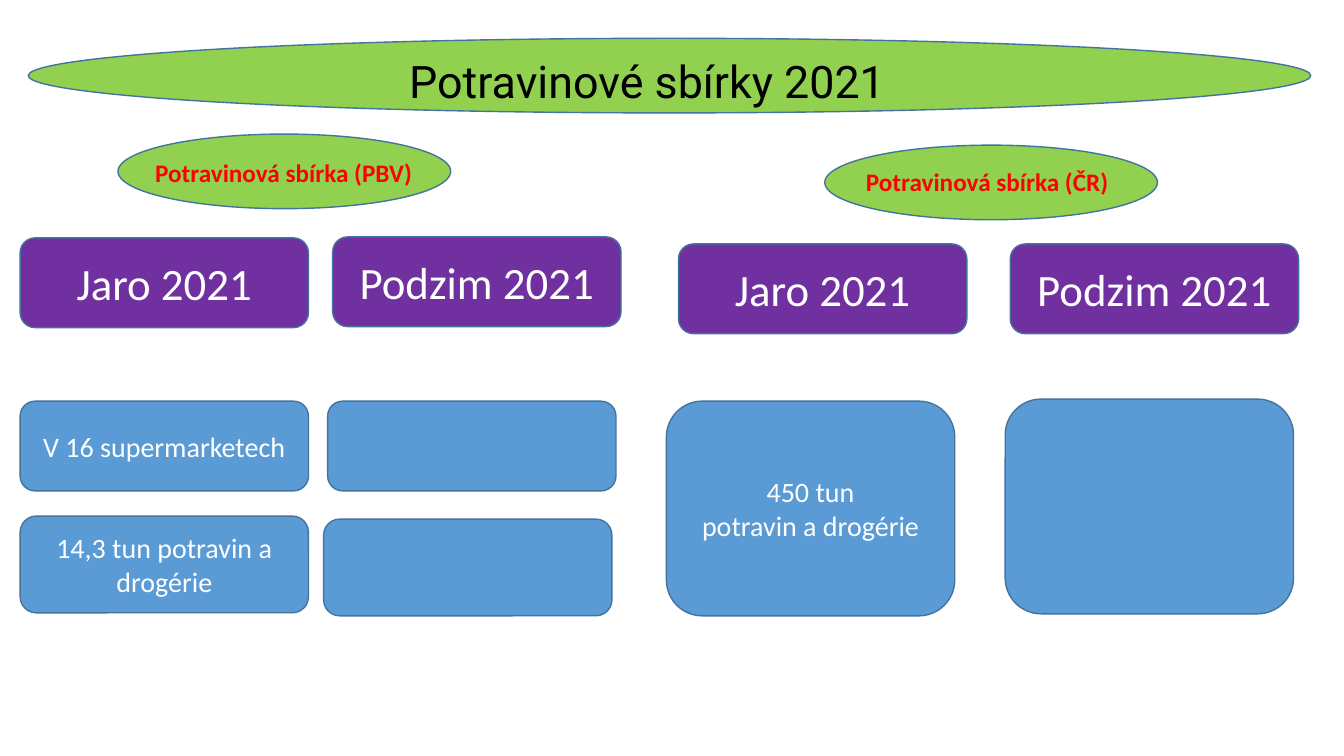
from dataclasses import dataclass

from pptx import Presentation
from pptx.dml.color import RGBColor
from pptx.enum.shapes import MSO_SHAPE as Shape
from pptx.enum.text import MSO_ANCHOR as Anchor, MSO_AUTO_SIZE as AutoSize, PP_ALIGN as Align
from pptx.slide import Slide
from pptx.text.text import TextFrame
from pptx.util import Inches, Pt

GREEN, PURPLE, BLUE, OUTLINE = "92D050", "7030A0", "5B9BD5", "43739E"
BLACK, WHITE, RED = "000000", "FFFFFF", "FF0000"
BOX_WIDTH = 2.86
HEADER_HEIGHT, AMOUNT_HEIGHT, TALL_HEIGHT = 0.89, 0.96, 2.13
ELLIPSE_HEIGHT = 0.74


@dataclass
class Ellipse:
    left: float
    top: float
    width: float


@dataclass
class Label:
    text: str
    left: float
    top: float
    width: float
    height: float
    size: int
    color: str
    font: str = "Calibri"
    bold: bool = False


@dataclass
class Box:
    left: float
    top: float
    height: float
    fill: str = BLUE
    text: str = ""
    size: int = 20


ELLIPSES = [
    Ellipse(0.28, 0.38, 12.72),
    Ellipse(1.17, 1.33, 3.3),
    Ellipse(8.18, 1.44, 3.3),
]
LABELS = [
    Label("Potravinové sbírky 2021", 3.96, 0.48, 6.25, 0.64, 32, BLACK, font="Roboto"),
    Label("Potravinová sbírka (PBV)", 1.44, 1.51, 3.72, 0.4, 18, RED, bold=True),
    Label("Potravinová sbírka (ČR)", 8.49, 1.6, 3.67, 0.4, 18, RED, bold=True),
]
BOXES = [
    Box(0.2, 2.36, HEADER_HEIGHT, PURPLE, "Jaro 2021", 32),
    Box(3.3, 2.35, HEADER_HEIGHT, PURPLE, "Podzim 2021", 32),
    Box(6.73, 2.42, HEADER_HEIGHT, PURPLE, "Jaro 2021", 32),
    Box(10.02, 2.42, HEADER_HEIGHT, PURPLE, "Podzim 2021", 32),
    Box(0.2, 3.98, HEADER_HEIGHT, text="V 16 supermarketech"),
    Box(3.25, 3.98, HEADER_HEIGHT),
    Box(0.2, 5.12, AMOUNT_HEIGHT, text="14,3 tun potravin a drogérie"),
    Box(3.21, 5.15, AMOUNT_HEIGHT),
    Box(6.61, 3.98, TALL_HEIGHT, text="450 tun\npotravin a drogérie"),
    Box(9.97, 3.96, TALL_HEIGHT),
]


def rgb(color: str) -> RGBColor:
    return RGBColor.from_string(color)


def write_text(frame: TextFrame, text: str, color: str, align: Align, font_format: dict) -> None:
    frame.word_wrap = True
    frame.text = text
    for paragraph in frame.paragraphs:
        paragraph.alignment = align
        for run in paragraph.runs:
            run.font.color.rgb = rgb(color)
            for name, value in font_format.items():
                setattr(run.font, name, value)


def add_outlined(slide: Slide, kind: Shape, left: float, top: float,
                 width: float, height: float, fill: str):
    shape = slide.shapes.add_shape(kind, Inches(left), Inches(top), Inches(width), Inches(height))
    shape.shadow.inherit = False
    shape.fill.solid()
    shape.fill.fore_color.rgb = rgb(fill)
    shape.line.color.rgb = rgb(OUTLINE)
    shape.line.width = Pt(1)
    return shape


def add_ellipse(slide: Slide, ellipse: Ellipse) -> None:
    shape = add_outlined(slide, Shape.OVAL, ellipse.left, ellipse.top,
                         ellipse.width, ELLIPSE_HEIGHT, GREEN)
    shape.rotation = 180


def add_label(slide: Slide, label: Label) -> None:
    shape = slide.shapes.add_textbox(Inches(label.left), Inches(label.top),
                                     Inches(label.width), Inches(label.height))
    write_text(shape.text_frame, label.text, label.color, Align.LEFT,
               {"name": label.font, "size": Pt(label.size), "bold": label.bold})
    shape.text_frame.auto_size = AutoSize.SHAPE_TO_FIT_TEXT


def add_box(slide: Slide, box: Box) -> None:
    shape = add_outlined(slide, Shape.ROUNDED_RECTANGLE, box.left, box.top,
                         BOX_WIDTH, box.height, box.fill)
    if box.text:
        shape.text_frame.vertical_anchor = Anchor.MIDDLE
        write_text(shape.text_frame, box.text, WHITE, Align.CENTER,
                   {"name": "Calibri", "size": Pt(box.size)})


def main() -> None:
    presentation = Presentation()
    presentation.slide_width = Inches(13.33)
    presentation.slide_height = Inches(7.5)
    slide = presentation.slides.add_slide(presentation.slide_layouts[6])
    for ellipse in ELLIPSES:
        add_ellipse(slide, ellipse)
    for label in LABELS:
        add_label(slide, label)
    for box in BOXES:
        add_box(slide, box)
    presentation.save("out.pptx")


if __name__ == "__main__":
    main()
